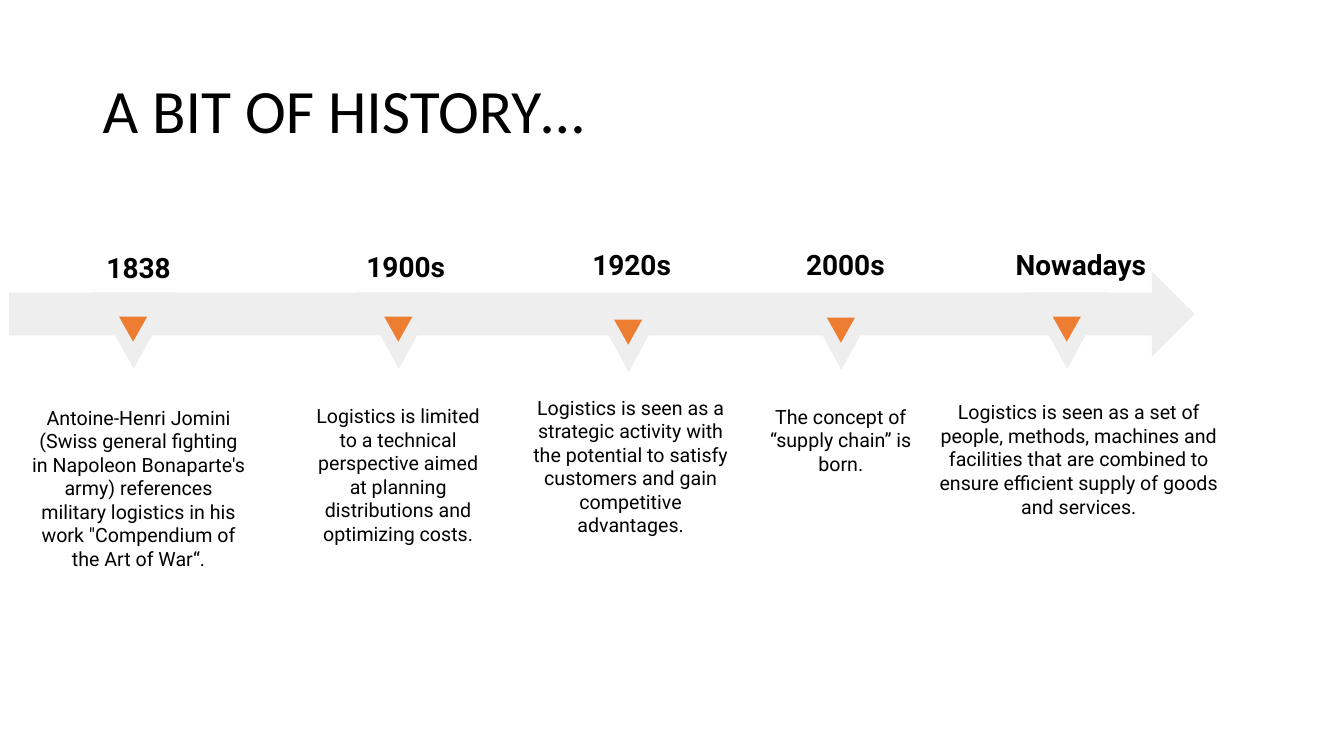
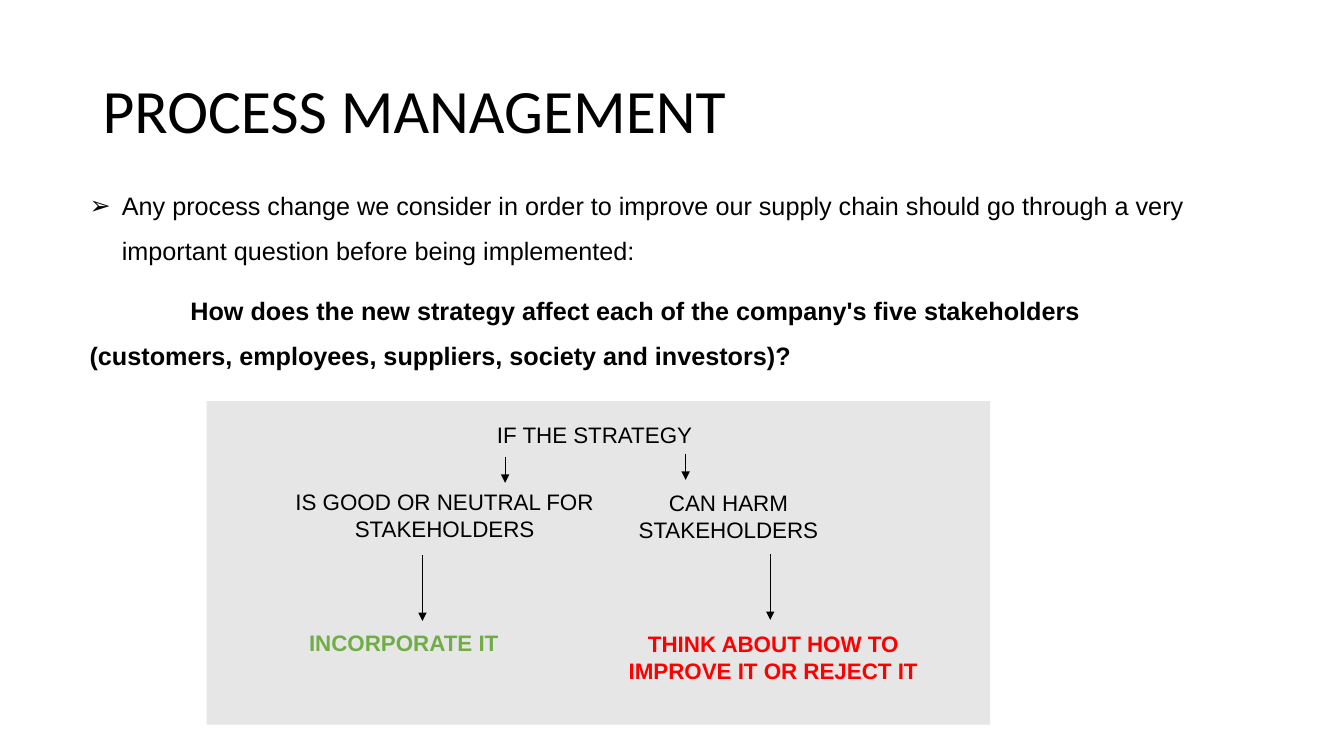
from dataclasses import dataclass

from lxml import etree
from pptx import Presentation
from pptx.dml.color import RGBColor
from pptx.enum.shapes import MSO_CONNECTOR, MSO_SHAPE
from pptx.enum.text import MSO_ANCHOR, PP_ALIGN
from pptx.oxml.ns import qn
from pptx.shapes.autoshape import Shape
from pptx.slide import Slide
from pptx.util import Pt

ARROW = MSO_SHAPE.RIGHT_ARROW
RECT = MSO_SHAPE.RECTANGLE
WEDGE = MSO_SHAPE.ISOSCELES_TRIANGLE
STRAIGHT = MSO_CONNECTOR.STRAIGHT
TOP = MSO_ANCHOR.TOP
MIDDLE = MSO_ANCHOR.MIDDLE
LEFT = PP_ALIGN.LEFT
CENTER = PP_ALIGN.CENTER
SCALE = 9144


@dataclass(frozen=True)
class Theme:
    ink: str = "000000"
    band: str = "EEEEEE"
    panel: str = "E7E6E6"
    accent: str = "ED7D31"
    good: str = "70AD47"
    bad: str = "FF0000"
    head: str = "Calibri"
    body: str = "Arial"
    event: str = "Roboto"
    title: int = 44
    year: int = 20
    lead: int = 18
    step: int = 16
    note: int = 14


THEME = Theme()


@dataclass(frozen=True)
class Box:
    x: int
    y: int
    w: int
    h: int


@dataclass(frozen=True)
class Style:
    font: str
    size: int
    color: str = THEME.ink
    bold: bool = False


@dataclass(frozen=True)
class Era:
    year: str
    label: Box
    mid: int
    top: int
    note: str
    area: Box


@dataclass(frozen=True)
class Step:
    text: str
    box: Box
    style: Style
    align: PP_ALIGN = CENTER


@dataclass(frozen=True)
class Link:
    x: int
    top: int
    end: int


TITLE = Style(THEME.head, THEME.title)
YEAR = Style(THEME.event, THEME.year, bold=True)
NOTE = Style(THEME.event, THEME.note)
LEAD = Style(THEME.body, THEME.lead)
ASK = Style(THEME.body, THEME.lead, bold=True)
STEP = Style(THEME.body, THEME.step)
GOOD = Style(THEME.body, THEME.step, THEME.good, True)
BAD = Style(THEME.body, THEME.step, THEME.bad, True)

ERAS = (
    Era("1838", Box(67, 245, 141, 41), 132, 290,
        "Antoine-Henri Jomini (Swiss general fighting in Napoleon Bonaparte's army) "
        "references military logistics in his work \"Compendium of the Art of War“.",
        Box(22, 380, 231, 208)),
    Era("1900s", Box(332, 244, 141, 41), 395, 290,
        "Logistics is limited to a technical perspective aimed at planning "
        "distributions and optimizing costs.",
        Box(298, 391, 194, 160)),
    Era("1920s", Box(556, 242, 141, 41), 623, 293,
        "Logistics is seen as a strategic activity with the potential to satisfy "
        "customers and gain competitive advantages.",
        Box(510, 382, 231, 161)),
    Era("2000s", Box(768, 242, 141, 41), 834, 291,
        "The concept of “supply chain” is born.",
        Box(737, 391, 194, 91)),
    Era("Nowadays", Box(982, 242, 180, 41), 1058, 290,
        "Logistics is seen as a set of people, methods, machines and facilities that "
        "are combined to ensure efficient supply of goods and services.",
        Box(919, 385, 302, 141)),
)

STEPS = (
    Step("IF THE STRATEGY", Box(483, 413, 222, 37), STEP, LEFT),
    Step("IS GOOD OR NEUTRAL FOR STAKEHOLDERS", Box(282, 479, 318, 64), STEP),
    Step("CAN HARM STAKEHOLDERS", Box(592, 480, 261, 64), STEP),
    Step("INCORPORATE IT", Box(270, 619, 261, 37), GOOD),
    Step("THINK ABOUT HOW TO IMPROVE IT OR REJECT IT", Box(612, 620, 310, 64), BAD),
)

LINKS = (
    Link(501, 453, 479),
    Link(680, 450, 476),
    Link(419, 551, 616),
    Link(764, 550, 615),
)


def px(size: int) -> int:
    return size * SCALE


def frame(slide: Slide, box: Box, anchor: MSO_ANCHOR = TOP, pad: int = 5):
    area = slide.shapes.add_textbox(px(box.x), px(box.y), px(box.w), px(box.h))
    text = area.text_frame
    text.word_wrap = True
    text.vertical_anchor = anchor
    text.margin_left = text.margin_right = px(10)
    text.margin_top = text.margin_bottom = px(pad)
    return text


def write(para, words: str, style: Style, align: PP_ALIGN = LEFT) -> None:
    para.alignment = align
    run = para.add_run()
    run.text = words
    font = run.font
    font.name = style.font
    font.size = Pt(style.size)
    font.bold = style.bold
    font.color.rgb = RGBColor.from_string(style.color)


def shape(slide: Slide, kind: MSO_SHAPE, box: Box, color: str) -> Shape:
    item = slide.shapes.add_shape(kind, px(box.x), px(box.y), px(box.w), px(box.h))
    item.shadow.inherit = False
    item.fill.solid()
    item.fill.fore_color.rgb = RGBColor.from_string(color)
    item.line.fill.background()
    return item


def wedge(slide: Slide, box: Box, color: str) -> None:
    shape(slide, WEDGE, box, color).rotation = 180


def arrow(slide: Slide, link: Link) -> None:
    line = slide.shapes.add_connector(
        STRAIGHT, px(link.x), px(link.top), px(link.x), px(link.end))
    line.line.color.rgb = RGBColor.from_string(THEME.ink)
    line.line.width = Pt(0.5)
    props = line.line._get_or_add_ln()
    etree.SubElement(props, qn("a:tailEnd"), type="triangle")
    etree.SubElement(line._element.spPr, qn("a:effectLst"))


def indent(para, left: int, first: int, mark: str = "") -> None:
    props = para._p.get_or_add_pPr()
    props.set("marL", str(px(left)))
    props.set("indent", str(px(first)))
    if mark:
        etree.SubElement(props, qn("a:buFont"), typeface=THEME.body)
        etree.SubElement(props, qn("a:buChar"), char=mark)


def start(deck, title: str) -> Slide:
    slide = deck.slides.add_slide(deck.slide_layouts[6])
    para = frame(slide, Box(92, 40, 1150, 145), MIDDLE).paragraphs[0]
    para.line_spacing = 0.9
    write(para, title, TITLE)
    return slide


def event(slide: Slide, era: Era) -> None:
    wedge(slide, Box(era.mid - 41, era.top, 83, 76), THEME.band)
    wedge(slide, Box(era.mid - 14, era.top + 24, 28, 25), THEME.accent)
    for words, box, style in ((era.year, era.label, YEAR), (era.note, era.area, NOTE)):
        write(frame(slide, box, MIDDLE, 10).paragraphs[0], words, style, CENTER)


def history(deck) -> None:
    slide = start(deck, "A BIT OF HISTORY…")
    shape(slide, ARROW, Box(9, 269, 1176, 85), THEME.band)
    for era in ERAS:
        event(slide, era)


def process(deck) -> None:
    slide = start(deck, "PROCESS MANAGEMENT")
    text = frame(slide, Box(79, 169, 1111, 220))
    lead = text.paragraphs[0]
    indent(lead, 32, -32, "➢")
    lead.line_spacing = 1.5
    write(lead, "Any process change we consider in order to improve our supply chain "
          "should go through a very important question before being implemented:", LEAD)
    ask = text.add_paragraph()
    indent(ask, 0, 100)
    ask.line_spacing = 1.5
    ask.space_before = Pt(10)
    write(ask, "How does the new strategy affect each of the company's five stakeholders "
          "(customers, employees, suppliers, society and investors)?", ASK)
    shape(slide, RECT, Box(205, 398, 777, 321), THEME.panel)
    for step in STEPS:
        write(frame(slide, step.box).paragraphs[0], step.text, step.style, step.align)
    for link in LINKS:
        arrow(slide, link)


def main() -> None:
    deck = Presentation()
    deck.slide_width = px(1333)
    deck.slide_height = px(750)
    history(deck)
    process(deck)
    deck.save("out.pptx")


if __name__ == "__main__":
    main()
